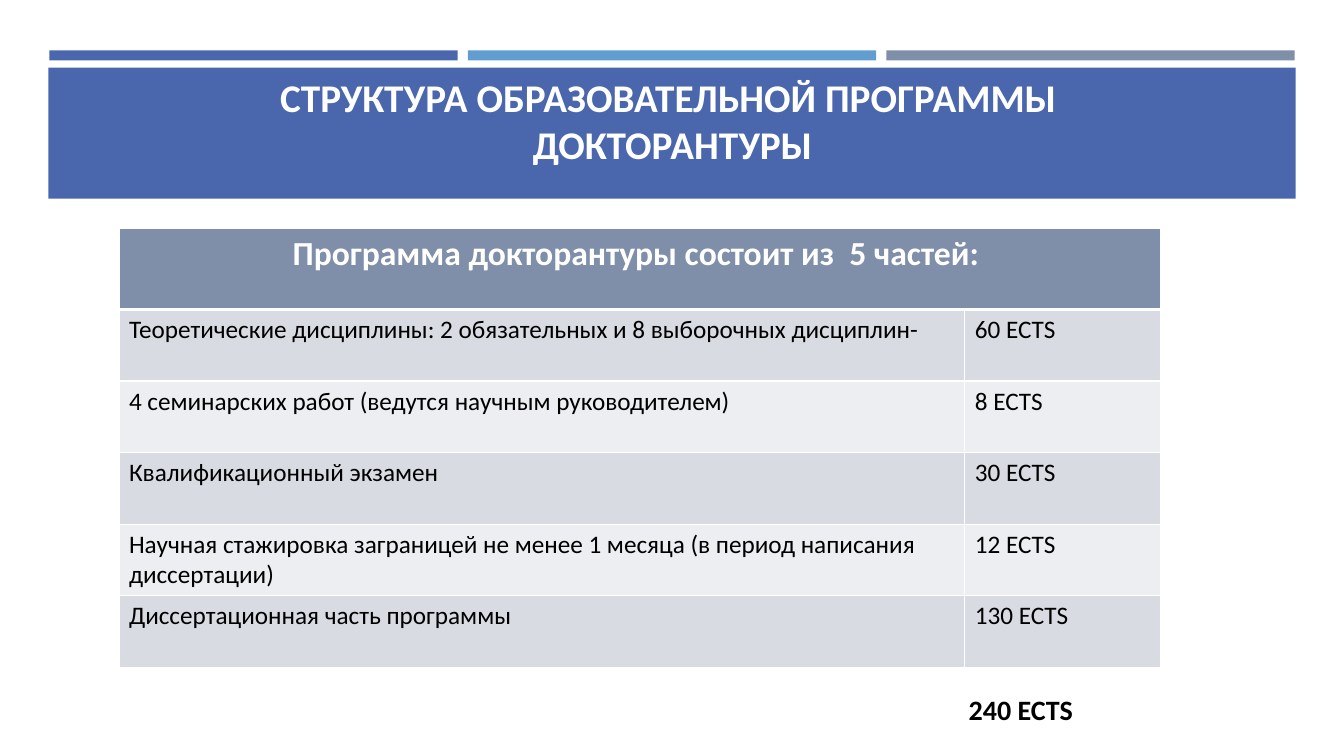
from lxml.etree import SubElement
from pptx import Presentation
from pptx.dml.color import RGBColor
from pptx.enum.shapes import MSO_SHAPE
from pptx.enum.text import MSO_ANCHOR, PP_ALIGN
from pptx.oxml.ns import qn
from pptx.util import Emu, Pt

SCALE = 9144  # EMU per px, 100 px to the inch
HEX = {
    "blue": "4A66AC", "sky": "629DD1", "slate": "7F8FA9",
    "dark": "D8DBE2", "light": "ECEEF1", "white": "FFFFFF", "black": "000000",
}
TITLE = {"size": 28, "bold": True, "color": "white", "align": PP_ALIGN.CENTER}
HEAD = {"size": 24, "bold": True, "color": "white", "align": PP_ALIGN.CENTER}
BODY = {"size": 18, "bold": False, "color": "black", "align": PP_ALIGN.LEFT}
TOTAL = {"size": 20, "bold": True, "color": "black", "align": PP_ALIGN.LEFT}

HEADING = "Программа докторантуры состоит из  5 частей: "
PARTS = [
    ("Теоретические дисциплины: 2 обязательных и 8 выборочных дисциплин-", "60 ECTS"),
    ("4 семинарских работ (ведутся научным руководителем)", "8 ECTS"),
    ("Квалификационный экзамен", "30 ECTS"),
    ("Научная стажировка заграницей не менее 1 месяца "
     "(в период написания диссертации)", "12 ECTS"),
    ("Диссертационная часть программы", "130 ECTS"),
]


def px(*nums):
    return [Emu(num * SCALE) for num in nums]


def tint(name):
    return RGBColor.from_string(HEX[name])


class Deck:
    def __init__(self, wide, high, font):
        self.prs = Presentation()
        self.prs.slide_width, self.prs.slide_height = px(wide, high)
        self.slide = self.prs.slides.add_slide(self.prs.slide_layouts[6])
        self.font = font

    def label(self, frame, text, look):
        para = frame.paragraphs[0]
        para.alignment = look["align"]
        run = para.add_run()
        run.text = text
        style = {"name": self.font, "size": Pt(look["size"]), "bold": look["bold"]}
        for key, value in style.items():
            setattr(run.font, key, value)
        run.font.color.rgb = tint(look["color"])

    def bar(self, box, color):
        shape = self.slide.shapes.add_shape(MSO_SHAPE.RECTANGLE, *px(*box))
        shape.shadow.inherit = False
        shape.fill.solid()
        shape.fill.fore_color.rgb = tint(color)
        shape.line.fill.background()

    def text(self, box, text, look, anchor=MSO_ANCHOR.TOP):
        frame = self.slide.shapes.add_textbox(*px(*box)).text_frame
        frame.word_wrap = True
        frame.vertical_anchor = anchor
        self.label(frame, text, look)

    def cell(self, cell, color, base=1):
        """Give a cell white edges and a fill; base is the lower edge in points."""
        props = cell._tc.get_or_add_tcPr()
        for side, width in zip("LRTB", (1, 1, 1, base)):
            line = SubElement(props, qn(f"a:ln{side}"), w=str(Pt(width)))
            fill = SubElement(line, qn("a:solidFill"))
            SubElement(fill, qn("a:srgbClr"), val=HEX["white"])
        cell.fill.solid()
        cell.fill.fore_color.rgb = tint(color)

    def table(self, left, top, cols, head, step, title, rows):
        highs = [head] + [step] * len(rows)
        box = px(left, top, sum(cols), sum(highs))
        grid = self.slide.shapes.add_table(len(highs), len(cols), *box).table
        grid.first_row = grid.horz_banding = False
        for col, width in zip(grid.columns, px(*cols)):
            col.width = width
        for row, high in zip(grid.rows, px(*highs)):
            row.height = high
        for cell in grid.rows[0].cells:
            self.cell(cell, "slate", 3)
        grid.cell(0, 0).merge(grid.cell(0, len(cols) - 1))
        self.label(grid.cell(0, 0).text_frame, title, HEAD)
        for r, row in enumerate(rows, 1):
            for c, text in enumerate(row):
                cell = grid.cell(r, c)
                self.cell(cell, "dark" if r % 2 else "light")
                self.label(cell.text_frame, text, BODY)


def main():
    deck = Deck(1333, 750, "Calibri")
    for i, color in enumerate(("blue", "sky", "slate")):
        deck.bar((49 + 415 * i, 50, 405, 10), color)
    deck.bar((48, 67, 1237, 130), "blue")
    deck.text((230, 75, 874, 88), "СТРУКТУРА ОБРАЗОВАТЕЛЬНОЙ ПРОГРАММЫ  ДОКТОРАНТУРЫ",
              TITLE, MSO_ANCHOR.MIDDLE)
    deck.table(118, 227, (839, 194), 80, 71, HEADING, PARTS)
    deck.text((951, 682, 153, 44), "240 ECTS", TOTAL)
    deck.prs.save("out.pptx")


if __name__ == "__main__":
    main()
